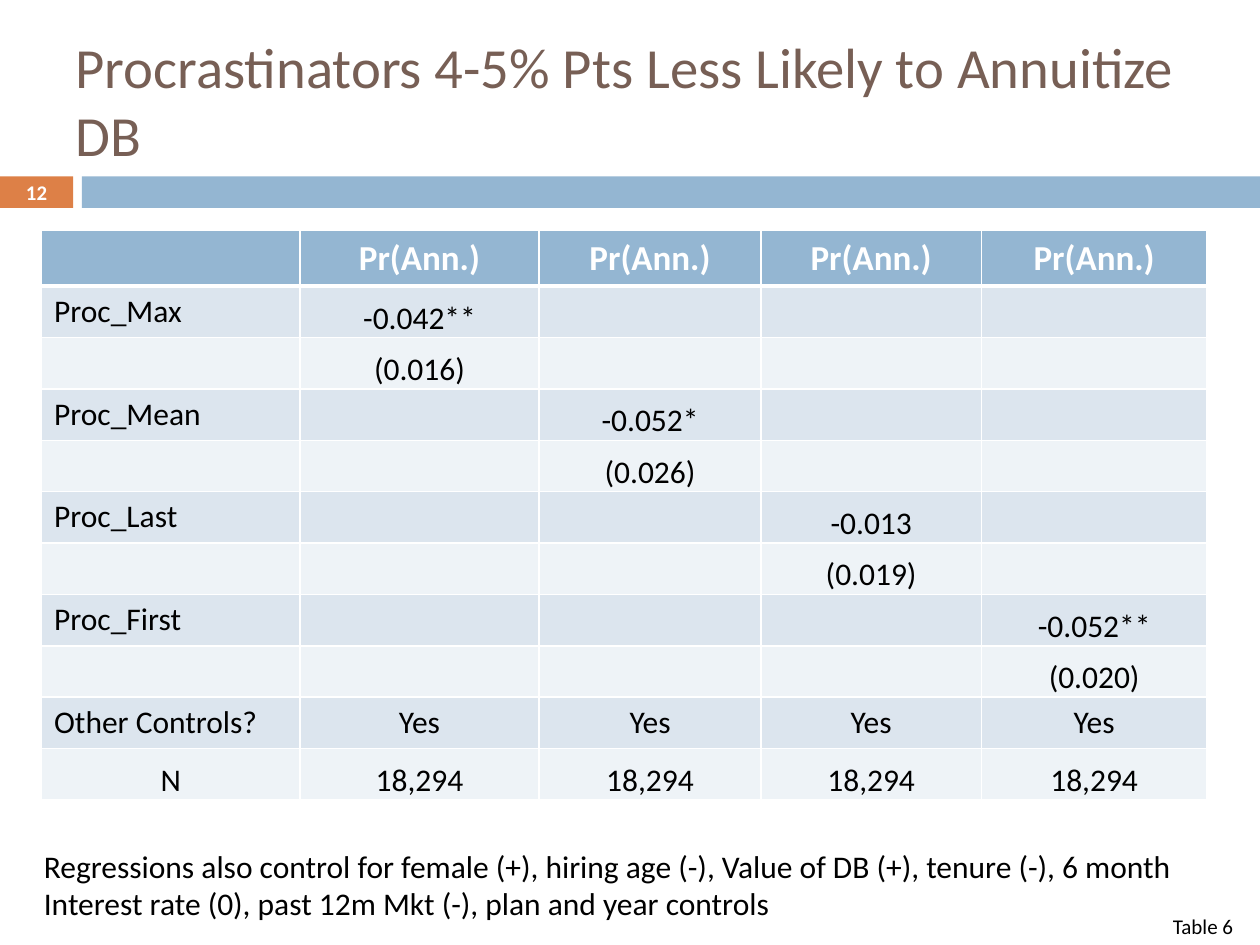
from dataclasses import dataclass

from lxml import etree
from pptx import Presentation
from pptx.dml.color import RGBColor
from pptx.enum.shapes import MSO_SHAPE
from pptx.enum.text import MSO_ANCHOR, PP_ALIGN
from pptx.oxml.ns import qn
from pptx.util import Inches, Pt

RECTANGLE = MSO_SHAPE.RECTANGLE
LEFT, CENTER = PP_ALIGN.LEFT, PP_ALIGN.CENTER
TOP, MIDDLE, BOTTOM = MSO_ANCHOR.TOP, MSO_ANCHOR.MIDDLE, MSO_ANCHOR.BOTTOM


@dataclass(frozen=True)
class Theme:
    font: str = "Calibri"
    title: str = "775F55"
    accent: str = "DD8047"
    header: str = "94B6D2"
    bands: tuple = ("DCE5EE", "EEF3F7")
    light: str = "FFFFFF"
    text: str = "000000"
    title_size: float = 32.4
    header_size: float = 20
    body_size: float = 18
    caption_size: float = 12
    number_size: float = 11.9


THEME = Theme()

TITLE = "Procrastinators 4-5% Pts Less Likely to Annuitize DB"
MEASURES = [  # label, coefficient, standard error
    ("Proc_Max", "-0.042**", "(0.016)"),
    ("Proc_Mean", "-0.052*", "(0.026)"),
    ("Proc_Last", "-0.013", "(0.019)"),
    ("Proc_First", "-0.052**", "(0.020)"),
]
NOTE_LINES = [
    "Regressions also control for female (+), hiring age (-), Value of DB (+), tenure (-), 6 month",
    "Interest rate (0), past 12m Mkt (-), plan and year controls",
]
COLUMN_WIDTHS = [2.05, 1.9, 1.76, 1.75, 1.79]


def color(value):
    return RGBColor.from_string(value)


def format_paragraph(paragraph, size, font_color, alignment=LEFT, bold=False):
    paragraph.alignment = alignment
    paragraph.font.name = THEME.font
    paragraph.font.size = Pt(size)
    paragraph.font.bold = bold
    paragraph.font.color.rgb = color(font_color)


def add_title(slide, left, top, width, height):
    title = slide.shapes.title
    title.left, title.top = Inches(left), Inches(top)
    title.width, title.height = Inches(width), Inches(height)
    title.text_frame.text = TITLE
    title.text_frame.word_wrap = True
    title.text_frame.vertical_anchor = MIDDLE
    format_paragraph(title.text_frame.paragraphs[0], THEME.title_size, THEME.title)


def add_bar(slide, left, top, width, height, fill):
    bar = slide.shapes.add_shape(
        RECTANGLE, Inches(left), Inches(top), Inches(width), Inches(height))
    bar.shadow.inherit = False
    bar.fill.solid()
    bar.fill.fore_color.rgb = color(fill)
    bar.line.fill.background()
    return bar


def add_number_band(slide, left, top, width, height):
    number_width, gap = 0.58, 0.07
    number = add_bar(slide, left, top, number_width, height, THEME.accent)
    frame = number.text_frame
    frame.margin_top = frame.margin_bottom = 0
    frame.vertical_anchor = MIDDLE
    frame.text = "12"
    format_paragraph(frame.paragraphs[0], THEME.number_size, THEME.light, CENTER, True)
    offset = number_width + gap
    add_bar(slide, left + offset, top, width - offset, height, THEME.header)


def add_text(slide, left, top, width, height, lines, size):
    box = slide.shapes.add_textbox(
        Inches(left), Inches(top), Inches(width), Inches(height))
    frame = box.text_frame
    frame.word_wrap = False
    frame.text = "\n".join(lines)
    for paragraph in frame.paragraphs:
        format_paragraph(paragraph, size, THEME.text)


def set_borders(cell, bottom_width):
    properties = cell._tc.get_or_add_tcPr()
    for side, width in (("lnL", 1), ("lnR", 1), ("lnT", 1), ("lnB", bottom_width)):
        line = etree.SubElement(properties, qn("a:" + side), w=str(Pt(width)))
        fill = etree.SubElement(line, qn("a:solidFill"))
        etree.SubElement(fill, qn("a:srgbClr"), val=THEME.light)


def regression_rows():
    """Place each measure's estimate and error on the diagonal."""
    count = len(MEASURES)
    rows = [[""] + ["Pr(Ann.)"] * count]
    for index, (label, estimate, error) in enumerate(MEASURES):
        for name, value in ((label, estimate), ("", error)):
            values = [""] * count
            values[index] = value
            rows.append([name] + values)
    rows.append(["Other Controls?"] + ["Yes"] * count)
    rows.append(["N"] + ["18,294"] * count)
    return rows


def fill_cell(cell, text, row, is_label):
    is_header = row == 0
    set_borders(cell, 3 if is_header else 1)
    cell.fill.solid()
    cell.fill.fore_color.rgb = color(
        THEME.header if is_header else THEME.bands[(row - 1) % 2])
    cell.text = text
    # Figures and the N label sit at the bottom of their cells
    is_figure = text == "N" or (text and not is_label and not is_header and text != "Yes")
    cell.vertical_anchor = BOTTOM if is_figure else TOP
    if is_figure:
        cell.margin_left = cell.margin_right = cell.margin_top = Inches(0.01)
        cell.margin_bottom = 0
    format_paragraph(
        cell.text_frame.paragraphs[0],
        THEME.header_size if is_header and text else THEME.body_size,
        THEME.light if is_header else THEME.text,
        LEFT if is_label and not is_figure else CENTER,
        is_header)


def add_regression_table(slide, left, top, width, height):
    rows = regression_rows()
    table = slide.shapes.add_table(
        len(rows), len(COLUMN_WIDTHS),
        Inches(left), Inches(top), Inches(width), Inches(height)).table
    for column, column_width in zip(table.columns, COLUMN_WIDTHS):
        column.width = Inches(column_width)
    for row, values in enumerate(rows):
        for column, text in enumerate(values):
            fill_cell(table.cell(row, column), text, row, column == 0)


def main():
    presentation = Presentation()
    presentation.slide_width, presentation.slide_height = Inches(10), Inches(7.5)
    slide = presentation.slides.add_slide(presentation.slide_layouts.get_by_name("Title Only"))

    # Heading and numbered band
    add_number_band(slide, 0, 1.4, 10, 0.25)
    add_title(slide, 0.5, 0.25, 9.25, 1.08)

    # Regression results
    add_regression_table(slide, 0.33, 1.83, 9.25, 4.49)

    # Note and table reference
    add_text(slide, 0.25, 6.67, 9.16, 0.71, NOTE_LINES, THEME.body_size)
    add_text(slide, 9.21, 7.2, 0.71, 0.3, ["Table 6"], THEME.caption_size)

    presentation.save("out.pptx")


if __name__ == "__main__":
    main()
